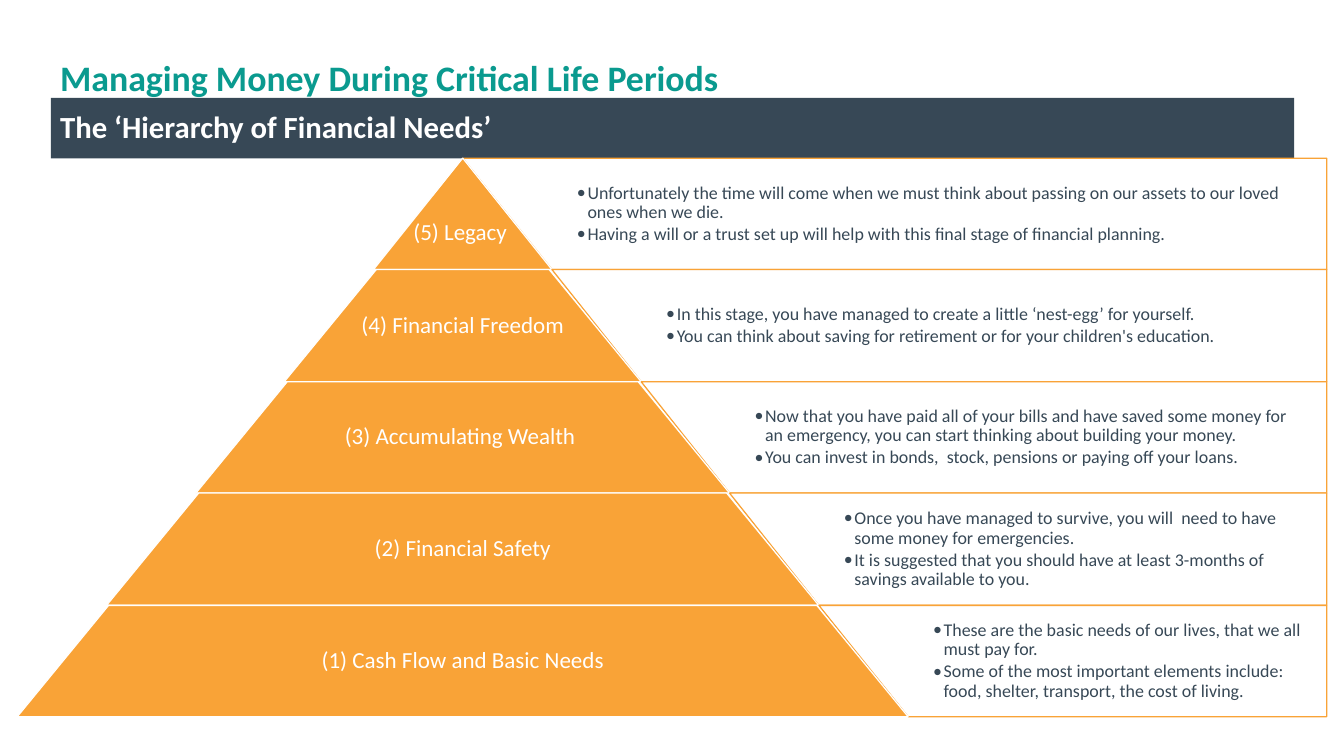
"""Build the slide on the hierarchy of financial needs."""
from lxml.etree import SubElement
from pptx import Presentation
from pptx.dml.color import RGBColor
from pptx.enum.shapes import MSO_SHAPE
from pptx.enum.text import MSO_ANCHOR, MSO_AUTO_SIZE, PP_ALIGN
from pptx.oxml.ns import qn
from pptx.util import Pt

PX = 9525
COLORS = {"teal": "0A9A8F", "slate": "374856", "orange": "F9A337", "white": "FFFFFF"}
APEX_X, PYRAMID_TOP, PYRAMID_HEIGHT, HALF_BASE = 482, 165, 582, 464
PANEL_RIGHT, PANEL_INSET, BULLET_INDENT, LABEL_INSET = 1382, 26, 11, 2
LEGACY_DROP = 20

tiers = [
    ("(5) Legacy ", [
        "Unfortunately the time will come when we must think about passing on our assets to our loved ones when we die.",
        "Having a will or a trust set up will help with this final stage of financial planning."]),
    ("(4) Financial Freedom", [
        "In this stage, you have managed to create a little ‘nest-egg’ for yourself.",
        "You can think about saving for retirement or for your children's education."]),
    ("(3) Accumulating Wealth ", [
        "Now that you have paid all of your bills and have saved some money for an emergency, "
        "you can start thinking about building your money.",
        "You can invest in bonds,  stock, pensions or paying off your loans."]),
    ("(2) Financial Safety", [
        "Once you have managed to survive, you will  need to have some money for emergencies.",
        "It is suggested that you should have at least 3-months of savings available to you."]),
    ("(1) Cash Flow and Basic Needs", [
        "These are the basic needs of our lives, that we all must pay for.",
        "Some of the most important elements include: food, shelter, transport, the cost of living."]),
]


def write(paragraph, text, size, color, align, bold=False):
    paragraph.alignment = align
    paragraph.line_spacing = 0.9
    paragraph.space_before = Pt(0)
    run = paragraph.add_run()
    run.text = text
    run.font.name = "Calibri"
    run.font.size = Pt(size)
    run.font.bold = bold
    run.font.color.rgb = RGBColor.from_string(COLORS[color])


def paint(shape, fill, line):
    shape.shadow.inherit = False
    shape.fill.solid()
    shape.fill.fore_color.rgb = RGBColor.from_string(COLORS[fill])
    shape.line.color.rgb = RGBColor.from_string(COLORS[line])
    shape.line.width = Pt(1)


deck = Presentation()
deck.slide_width, deck.slide_height = 1400 * PX, 788 * PX
slide = deck.slides.add_slide(deck.slide_layouts[1])
title, subtitle = slide.shapes.title, slide.placeholders[1]

for heading, top, height, text, size, color, align in [
        (title, 45, 76, "Managing Money During Critical Life Periods", 28, "teal", PP_ALIGN.LEFT),
        (subtitle, 102, 63, "The ‘Hierarchy of Financial Needs’", 24, "white", PP_ALIGN.JUSTIFY)]:
    heading.left, heading.top = 53 * PX, top * PX
    heading.width, heading.height = 1295 * PX, height * PX
    heading.text_frame.auto_size = MSO_AUTO_SIZE.NONE
    heading.text_frame.vertical_anchor = MSO_ANCHOR.MIDDLE
    write(heading.text_frame.paragraphs[0], text, size, color, align, bold=True)

subtitle.fill.solid()
subtitle.fill.fore_color.rgb = RGBColor.from_string(COLORS["slate"])
subtitle_format = subtitle.text_frame.paragraphs[0]._p.get_or_add_pPr()
subtitle_format.set("marL", "0")
subtitle_format.set("indent", "0")
SubElement(subtitle_format, qn("a:buNone"))

for level, (need, advice) in enumerate(tiers):
    top, bottom = [PYRAMID_TOP + round(PYRAMID_HEIGHT * edge / 5) for edge in (level, level + 1)]
    upper_half, lower_half = [round(HALF_BASE * edge / 5) for edge in (level, level + 1)]
    height = bottom - top

    outline = slide.shapes.build_freeform((APEX_X + upper_half) * PX, top * PX)
    outline.add_line_segments([(x * PX, y * PX) for x, y in [
        (PANEL_RIGHT, top), (PANEL_RIGHT, bottom), (APEX_X + lower_half, bottom)]])
    panel = outline.convert_to_shape()
    paint(panel, "white", "orange")
    panel_color = panel.fill._xPr.find(qn("a:solidFill"))[0]
    SubElement(panel_color, qn("a:alpha"), val="90000")
    panel_text = panel.text_frame
    panel_text.word_wrap = True
    panel_text.vertical_anchor = MSO_ANCHOR.MIDDLE
    panel_text.margin_left = (lower_half - upper_half + PANEL_INSET) * PX
    panel_text.margin_right = panel_text.margin_top = panel_text.margin_bottom = PANEL_INSET * PX
    for order, sentence in enumerate(advice):
        point = panel_text.add_paragraph() if order else panel_text.paragraphs[0]
        write(point, sentence, 14, "slate", PP_ALIGN.LEFT)
        point.space_before = Pt(2.1 * order)
        point_format = point._p.get_or_add_pPr()
        point_format.set("marL", str(BULLET_INDENT * PX))
        point_format.set("indent", str(-BULLET_INDENT * PX))
        SubElement(point_format, qn("a:buFont"), typeface="Calibri")
        SubElement(point_format, qn("a:buChar"), char="•")

    step = slide.shapes.add_shape(
        MSO_SHAPE.TRAPEZOID, (APEX_X - lower_half) * PX, top * PX, 2 * lower_half * PX, height * PX)
    step.adjustments[0] = 0.8 if level == 0 else 0.82
    paint(step, "orange", "white")

    label_half = round(lower_half * 0.65) if level else lower_half
    label_top = top if level else top + LEGACY_DROP
    label = slide.shapes.add_textbox(
        (APEX_X - label_half) * PX, label_top * PX, 2 * label_half * PX, height * PX).text_frame
    label.word_wrap = True
    label.vertical_anchor = MSO_ANCHOR.MIDDLE
    label.margin_left = label.margin_right = label.margin_top = label.margin_bottom = LABEL_INSET * PX
    write(label.paragraphs[0], need, 18, "white", PP_ALIGN.CENTER)

deck.save("out.pptx")
